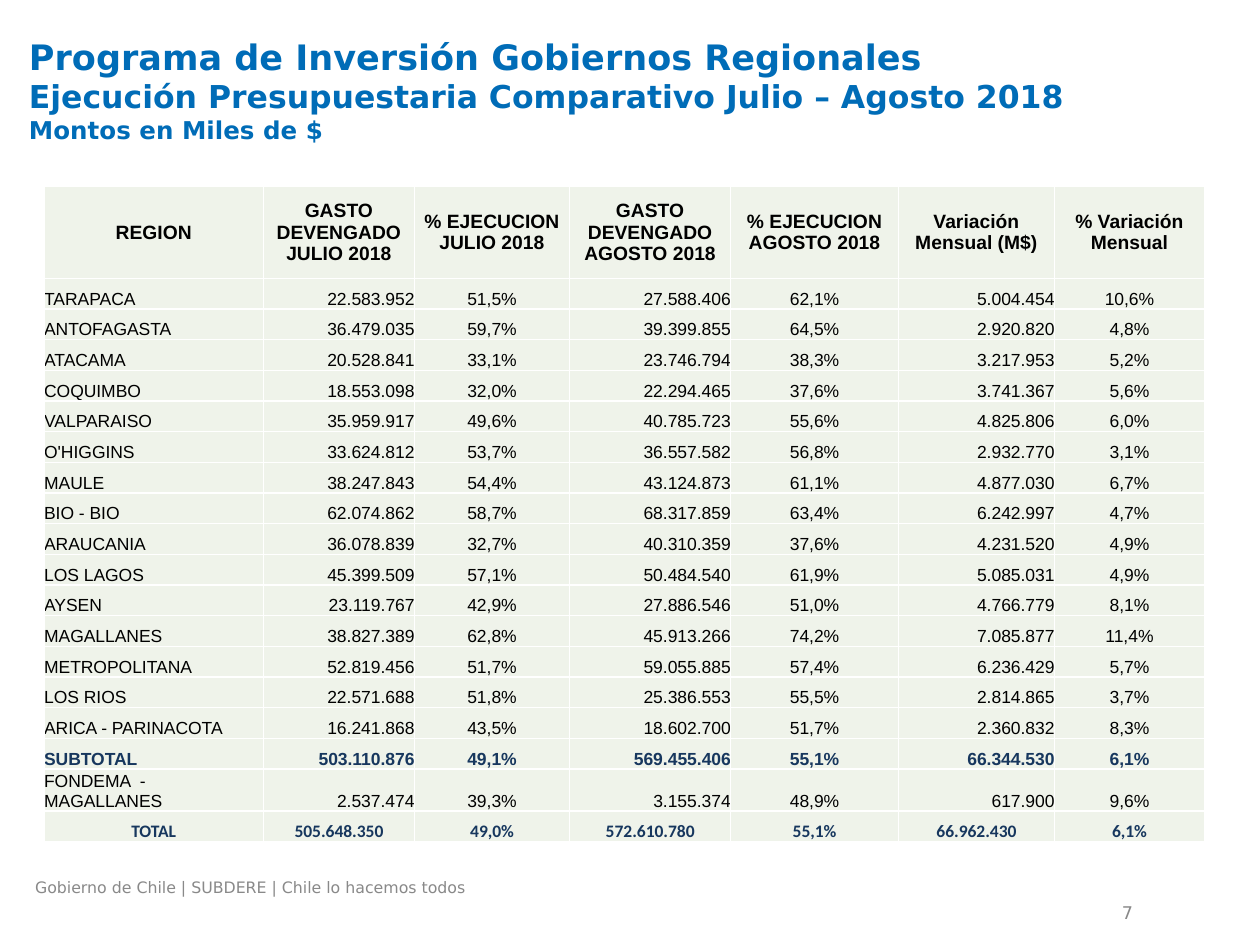
from lxml.etree import SubElement
from pptx import Presentation
from pptx.dml.color import RGBColor
from pptx.enum.text import MSO_ANCHOR as Anchor, MSO_AUTO_SIZE as AutoSize, PP_ALIGN as Align
from pptx.oxml.ns import qn
from pptx.util import Inches, Pt

COLORS = {"blue": "006CB7", "gray": "898989", "black": "000000",
          "navy": "17375E", "cell": "EFF3EA", "border": "FFFFFF"}

TITLE_LINES = [
    ("Programa de Inversión Gobiernos Regionales", 20),
    ("Ejecución Presupuestaria Comparativo Julio – Agosto 2018", 18),
    ("Montos en Miles de $", 14),
]

HEADERS = ["REGION", "GASTO DEVENGADO JULIO 2018", "% EJECUCION JULIO 2018",
           "GASTO DEVENGADO AGOSTO 2018", "% EJECUCION AGOSTO 2018",
           "Variación Mensual (M$)", "% Variación Mensual"]

RECORDS = [
    ("TARAPACA", "22.583.952", "51,5%", "27.588.406", "62,1%", "5.004.454", "10,6%"),
    ("ANTOFAGASTA", "36.479.035", "59,7%", "39.399.855", "64,5%", "2.920.820", "4,8%"),
    ("ATACAMA", "20.528.841", "33,1%", "23.746.794", "38,3%", "3.217.953", "5,2%"),
    ("COQUIMBO", "18.553.098", "32,0%", "22.294.465", "37,6%", "3.741.367", "5,6%"),
    ("VALPARAISO", "35.959.917", "49,6%", "40.785.723", "55,6%", "4.825.806", "6,0%"),
    ("O'HIGGINS", "33.624.812", "53,7%", "36.557.582", "56,8%", "2.932.770", "3,1%"),
    ("MAULE", "38.247.843", "54,4%", "43.124.873", "61,1%", "4.877.030", "6,7%"),
    ("BIO - BIO", "62.074.862", "58,7%", "68.317.859", "63,4%", "6.242.997", "4,7%"),
    ("ARAUCANIA", "36.078.839", "32,7%", "40.310.359", "37,6%", "4.231.520", "4,9%"),
    ("LOS LAGOS", "45.399.509", "57,1%", "50.484.540", "61,9%", "5.085.031", "4,9%"),
    ("AYSEN", "23.119.767", "42,9%", "27.886.546", "51,0%", "4.766.779", "8,1%"),
    ("MAGALLANES", "38.827.389", "62,8%", "45.913.266", "74,2%", "7.085.877", "11,4%"),
    ("METROPOLITANA", "52.819.456", "51,7%", "59.055.885", "57,4%", "6.236.429", "5,7%"),
    ("LOS RIOS", "22.571.688", "51,8%", "25.386.553", "55,5%", "2.814.865", "3,7%"),
    ("ARICA - PARINACOTA", "16.241.868", "43,5%", "18.602.700", "51,7%", "2.360.832", "8,3%"),
    ("SUBTOTAL", "503.110.876", "49,1%", "569.455.406", "55,1%", "66.344.530", "6,1%"),
    ("FONDEMA  - MAGALLANES", "2.537.474", "39,3%", "3.155.374", "48,9%", "617.900", "9,6%"),
    ("TOTAL", "505.648.350", "49,0%", "572.610.780", "55,1%", "66.962.430", "6,1%"),
]

COLUMN_WIDTHS = [1.74, 1.2, 1.23, 1.28, 1.33, 1.24, 1.19]
COLUMN_ALIGNS = [Align.LEFT] + [Align.RIGHT, Align.CENTER] * 3
HEADER_HEIGHT = 0.73

BODY_FONT = {"name": "Arial", "size": Pt(10), "bold": False}
HEADER_FONT = {"name": "Arial", "size": Pt(11), "bold": True}
SUBTOTAL_FONT = {**BODY_FONT, "bold": True}
TOTAL_FONT = {**SUBTOTAL_FONT, "name": "Calibri"}


def set_font(font, color, formats):
    for name, value in formats.items():
        setattr(font, name, value)
    font.color.rgb = RGBColor.from_string(COLORS[color])


def add_title(page, box):
    title = page.shapes.title
    title.left, title.top, title.width, title.height = map(Inches, box)
    frame = title.text_frame
    frame.auto_size = AutoSize.NONE
    frame.vertical_anchor = Anchor.TOP
    para = frame.paragraphs[0]
    para.alignment = Align.LEFT
    for index, (line, size) in enumerate(TITLE_LINES):
        if index:
            para.add_line_break()
        span = para.add_run()
        span.text = line
        set_font(span.font, "blue", {"name": "DejaVu Sans", "size": Pt(size), "bold": True})


def add_note(page, box, text, size, align, anchor):
    frame = page.shapes.add_textbox(*map(Inches, box)).text_frame
    frame.word_wrap = True
    frame.vertical_anchor = anchor
    para = frame.paragraphs[0]
    para.alignment = align
    span = para.add_run()
    span.text = text
    set_font(span.font, "gray", {"name": "DejaVu Sans", "size": Pt(size)})


def add_borders(cell):
    properties = cell._tc.get_or_add_tcPr()
    for side in ("lnL", "lnR", "lnT", "lnB"):
        line = SubElement(properties, qn(f"a:{side}"), w=str(Pt(1)))
        fill = SubElement(line, qn("a:solidFill"))
        SubElement(fill, qn("a:srgbClr"), val=COLORS["border"])


def fill_cell(cell, text, align, anchor, color, formats):
    for side in ("left", "right", "top", "bottom"):
        setattr(cell, f"margin_{side}", 0)
    add_borders(cell)
    cell.fill.solid()
    cell.fill.fore_color.rgb = RGBColor.from_string(COLORS["cell"])
    cell.vertical_anchor = anchor
    para = cell.text_frame.paragraphs[0]
    para.alignment = align
    span = para.add_run()
    span.text = text
    set_font(span.font, color, formats)


def row_style(label):
    """Return the alignments, text colour and font of a body row."""
    if label == "TOTAL":
        return [Align.CENTER] * len(HEADERS), "navy", TOTAL_FONT
    if label == "SUBTOTAL":
        return COLUMN_ALIGNS, "navy", SUBTOTAL_FONT
    return COLUMN_ALIGNS, "black", BODY_FONT


def add_region_table(page, box):
    table = page.shapes.add_table(len(RECORDS) + 1, len(HEADERS), *map(Inches, box)).table
    for column, width in zip(table.columns, COLUMN_WIDTHS):
        column.width = Inches(width)
    body_height = Inches((box[3] - HEADER_HEIGHT) / len(RECORDS))
    for index, row in enumerate(table.rows):
        row.height = body_height if index else Inches(HEADER_HEIGHT)

    for cell, text in zip(table.rows[0].cells, HEADERS):
        fill_cell(cell, text, Align.CENTER, Anchor.MIDDLE, "black", HEADER_FONT)
    for index, record in enumerate(RECORDS, 1):
        aligns, color, formats = row_style(record[0])
        for cell, text, align in zip(table.rows[index].cells, record, aligns):
            fill_cell(cell, text, align, Anchor.BOTTOM, color, formats)


def main():
    deck = Presentation()
    deck.slide_width, deck.slide_height = Inches(10), Inches(7.5)
    page = deck.slides.add_slide(deck.slide_layouts.get_by_name("Title Only"))
    add_title(page, (0.13, 0.23, 8.97, 1.25))
    add_note(page, (0.18, 6.92, 6.48, 0.27),
             "Gobierno de Chile | SUBDERE | Chile lo hacemos todos", 9, Align.LEFT, Anchor.TOP)
    add_note(page, (6.76, 7.14, 2.33, 0.21), "7", 10, Align.RIGHT, Anchor.MIDDLE)
    add_region_table(page, (0.35, 1.48, sum(COLUMN_WIDTHS), 5.11))
    deck.save("out.pptx")


if __name__ == "__main__":
    main()
